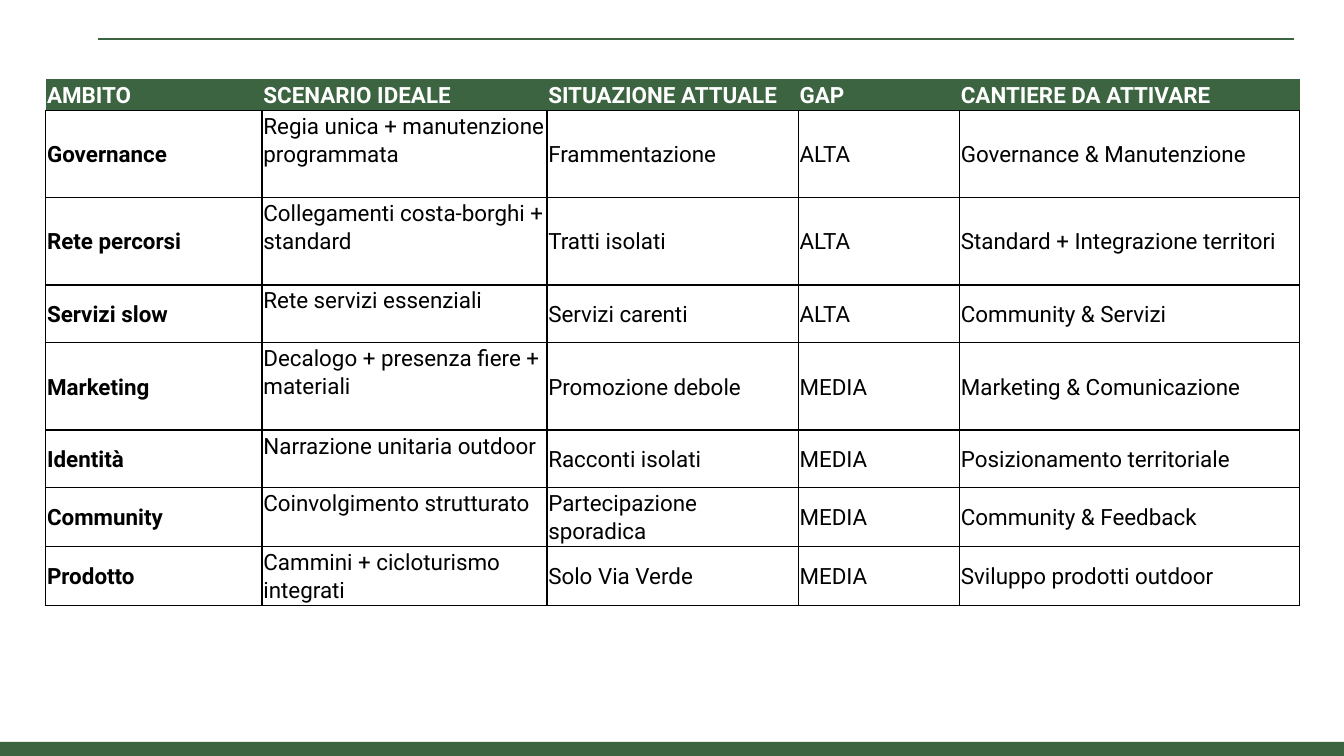
from lxml import etree
from pptx import Presentation
from pptx.dml.color import RGBColor
from pptx.enum.shapes import MSO_CONNECTOR, MSO_SHAPE
from pptx.enum.text import MSO_ANCHOR
from pptx.oxml.ns import qn
from pptx.util import Inches, Pt

STRAIGHT = MSO_CONNECTOR.STRAIGHT
RECT = MSO_SHAPE.RECTANGLE
TOP, MIDDLE = MSO_ANCHOR.TOP, MSO_ANCHOR.MIDDLE
GREEN, BLACK, WHITE = "3C6441", "000000", "FFFFFF"

ROWS = [
    ("AMBITO", "SCENARIO IDEALE", "SITUAZIONE ATTUALE", "GAP",
     "CANTIERE DA ATTIVARE"),
    ("Governance", "Regia unica + manutenzione programmata",
     "Frammentazione", "ALTA", "Governance & Manutenzione"),
    ("Rete percorsi", "Collegamenti costa-borghi + standard",
     "Tratti isolati", "ALTA", "Standard + Integrazione territori"),
    ("Servizi slow", "Rete servizi essenziali",
     "Servizi carenti", "ALTA", "Community & Servizi"),
    ("Marketing", "Decalogo + presenza fiere + materiali",
     "Promozione debole", "MEDIA", "Marketing & Comunicazione"),
    ("Identità", "Narrazione unitaria outdoor",
     "Racconti isolati", "MEDIA", "Posizionamento territoriale"),
    ("Community", "Coinvolgimento strutturato",
     "Partecipazione sporadica", "MEDIA", "Community & Feedback"),
    ("Prodotto", "Cammini + cicloturismo integrati",
     "Solo Via Verde", "MEDIA", "Sviluppo prodotti outdoor"),
]
WIDTHS = [1.61, 2.12, 1.87, 1.2, 2.53]
HEIGHTS = [0.23, 0.65, 0.65, 0.43, 0.65, 0.43, 0.43, 0.43]


def color(code):
    return RGBColor.from_string(code)


def set_edges(cell, drawn):
    """Draw the named sides (L, R, T, B) in black and clear the others."""
    props = cell._tc.get_or_add_tcPr()
    for spot, side in enumerate("LRTB"):
        edge = etree.Element(qn(f"a:ln{side}"), w=str(Pt(0.75)))
        if side in drawn:
            fill = etree.SubElement(edge, qn("a:solidFill"))
            etree.SubElement(fill, qn("a:srgbClr"), val=BLACK)
        else:
            etree.SubElement(edge, qn("a:noFill"))
        props.insert(spot, edge)


prs = Presentation()
prs.slide_width, prs.slide_height = Inches(10), Inches(5.625)
slide = prs.slides.add_slide(prs.slide_layouts[6])
shapes = slide.shapes

rule = shapes.add_connector(STRAIGHT, Inches(0.73), Inches(0.29),
                            Inches(9.63), Inches(0.29))
rule.line.color.rgb = color(GREEN)
rule.line.width = Pt(0.75)
etree.SubElement(rule._element.spPr, qn("a:effectLst"))

band = shapes.add_shape(RECT, 0, Inches(5.52), Inches(10), Inches(0.11))
band.shadow.inherit = False
band.fill.solid()
band.fill.fore_color.rgb = color(GREEN)
band.line.fill.background()

table = shapes.add_table(len(ROWS), len(WIDTHS), Inches(0.34), Inches(0.59),
                         Inches(sum(WIDTHS)), Inches(sum(HEIGHTS))).table
table.first_row = table.horz_banding = False
for col, width in zip(table.columns, WIDTHS):
    col.width = Inches(width)
for row, height in zip(table.rows, HEIGHTS):
    row.height = Inches(height)

for r, texts in enumerate(ROWS):
    head = r == 0
    for c, text in enumerate(texts):
        cell = table.cell(r, c)
        cell.text = text
        cell.margin_left = cell.margin_right = Inches(0.01)
        cell.margin_top = cell.margin_bottom = Inches(0.01)
        cell.vertical_anchor = TOP if c == 1 and not head else MIDDLE
        if head:
            cell.fill.solid()
            cell.fill.fore_color.rgb = color(GREEN)
        else:
            cell.fill.background()
        set_edges(cell, "B" if head else "LRTB")
        para = cell.text_frame.paragraphs[0]
        para.line_spacing = 1.07
        para.font.name = "Roboto"
        para.font.size = Pt(12)
        para.font.bold = head or c == 0
        para.font.color.rgb = color(WHITE if head else BLACK)

prs.save("out.pptx")
